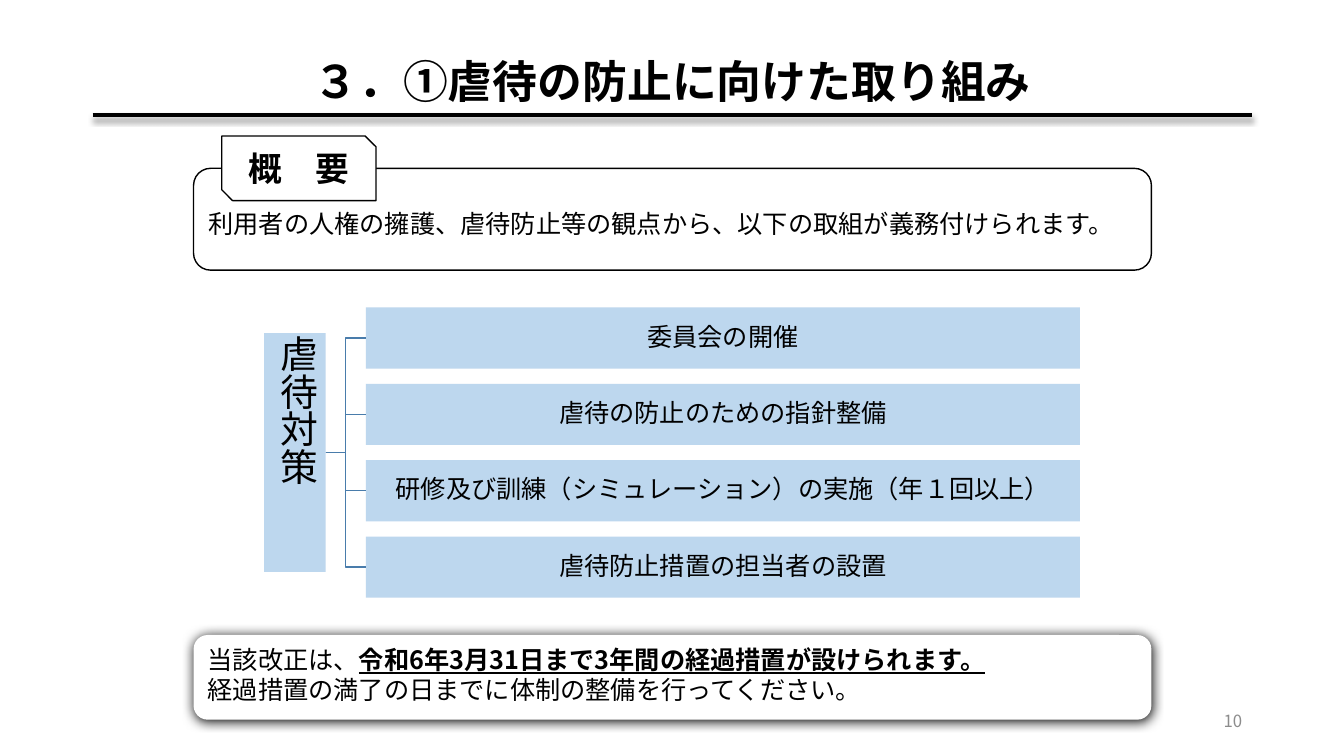
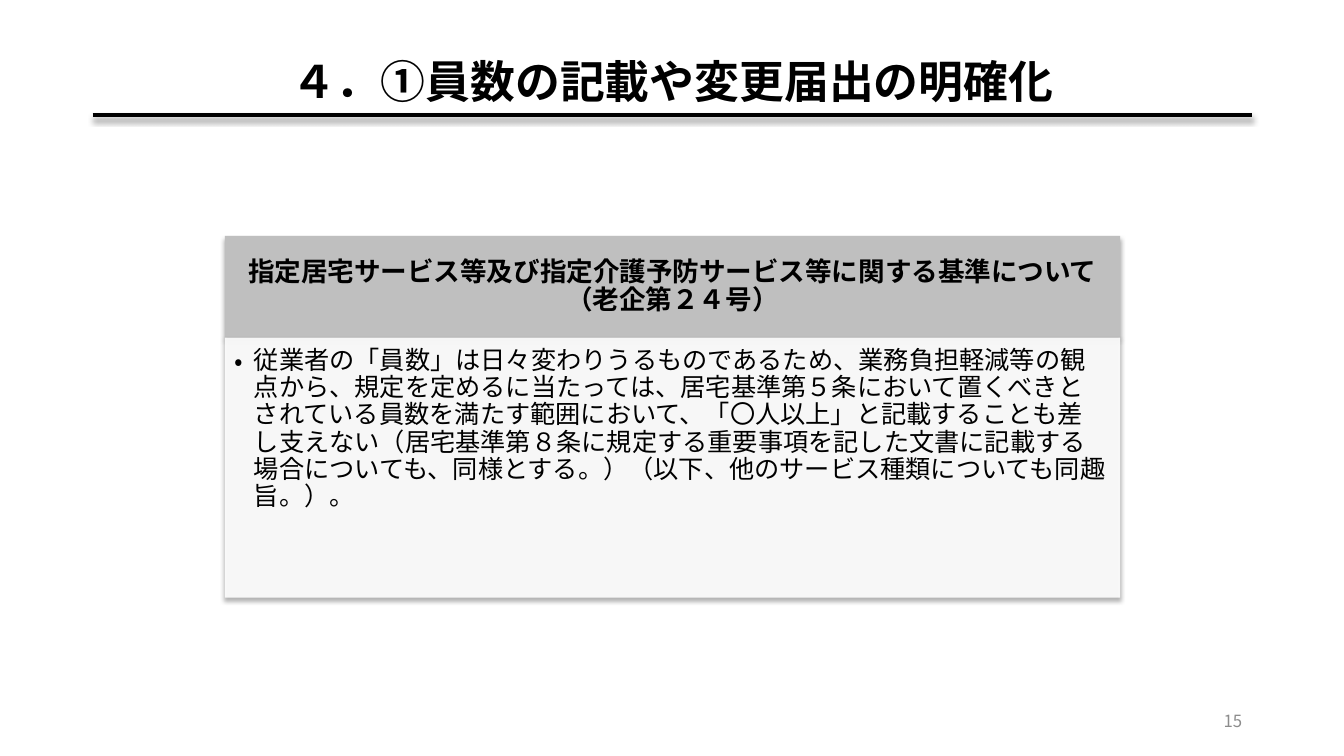
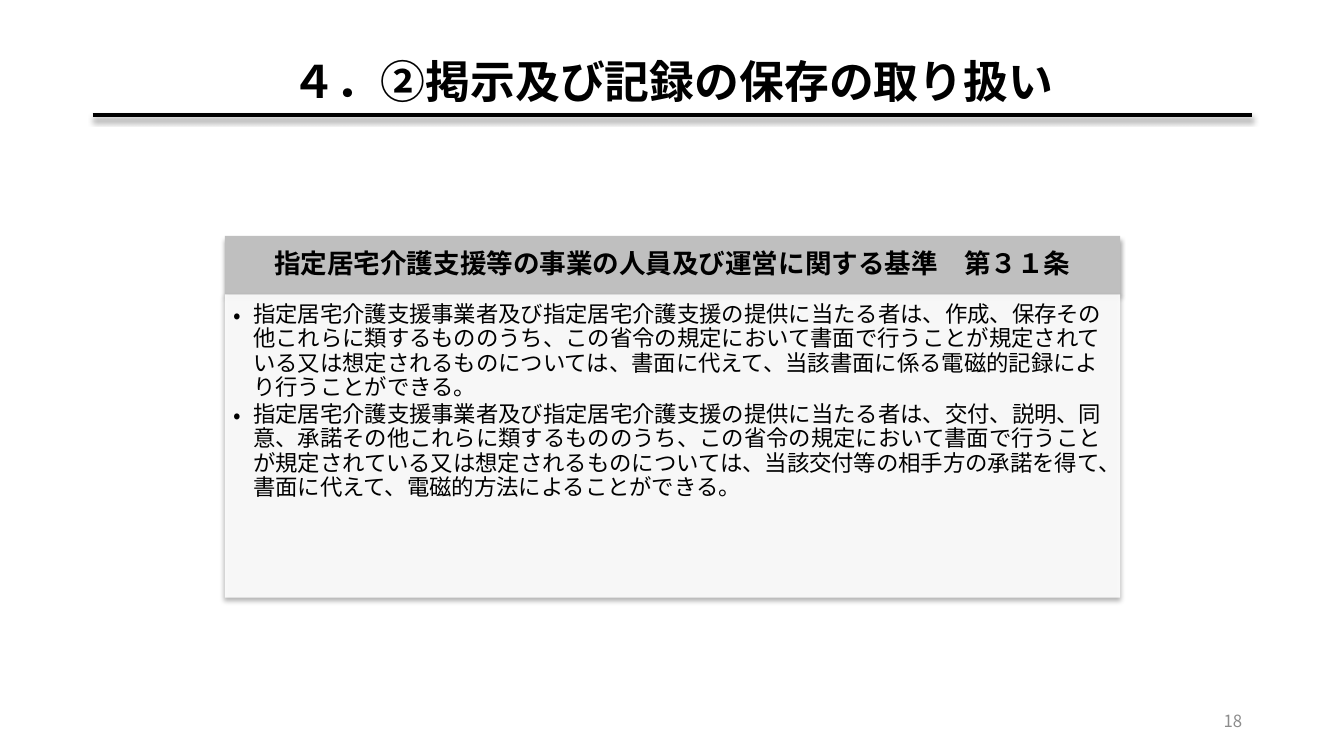
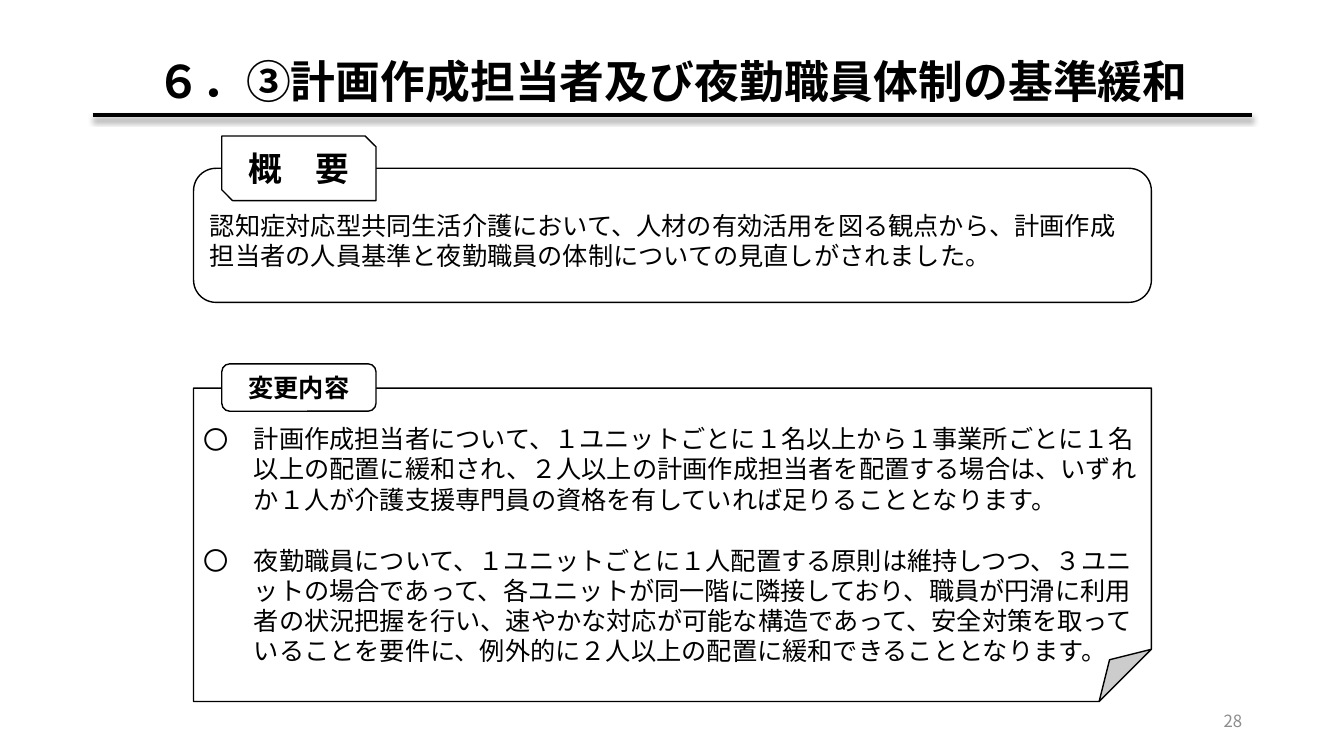
from dataclasses import dataclass

from lxml.etree import SubElement
from pptx import Presentation
from pptx.dml.color import RGBColor
from pptx.enum.lang import MSO_LANGUAGE_ID as Language
from pptx.enum.shapes import MSO_CONNECTOR as Connector, MSO_SHAPE as Shape
from pptx.enum.text import MSO_ANCHOR as Anchor, PP_ALIGN as Align
from pptx.oxml.ns import qn
from pptx.util import Inches, Pt

FONT = "Noto Sans CJK JP"
BLACK = RGBColor(0x00, 0x00, 0x00)
WHITE = RGBColor(0xFF, 0xFF, 0xFF)
PAGE_GRAY = RGBColor(0x8C, 0x8C, 0x8C)
HEADER_GRAY = RGBColor(0xBF, 0xBF, 0xBF)
PALE_BLUE = RGBColor(0xBD, 0xD7, 0xEE)
LINK_BLUE = RGBColor(0x49, 0x7C, 0xAB)
TEXT_INSETS = (0.1, 0.05, 0.1, 0.05)
PANEL_INSETS = (0.1, 0.35, 0.1, 0.05)
LABEL_LEFT, LABEL_WIDTH = 0.28, 1.53


@dataclass(frozen=True)
class Box:
    left: float
    top: float
    width: float
    height: float

    def emu(self):
        return [Inches(n) for n in (self.left, self.top, self.width, self.height)]

    def inner(self, left, top, width, height):
        """Return a box whose offset is counted from this box's corner."""
        return Box(self.left + left, self.top + top, width, height)

    def rows(self, count, gap):
        height = (self.height - gap * (count - 1)) / count
        return [self.inner(0, i * (height + gap), self.width, height) for i in range(count)]


SLIDE = Box(0, 0, 13.33, 7.5)
CONTENT = SLIDE.inner(0.92, 0.4, 11.5, 6.95)
PANEL_LEFT, PANEL_WIDTH = 1.92, 9.5
CARD = SLIDE.inner(2.23, 2.34, 8.88, 3.59)


def set_shadow(shape, opacity=0, blur=0, distance=0):
    """Replace the inherited shadow by a downward one, or by none."""
    effects = SubElement(shape._element.spPr, qn("a:effectLst"))
    if opacity:
        shadow = SubElement(effects, qn("a:outerShdw"), blurRad=str(Pt(blur)),
                            dist=str(Pt(distance)), dir="5400000", algn="t", rotWithShape="0")
        color = SubElement(shadow, qn("a:srgbClr"), val=str(BLACK))
        SubElement(color, qn("a:alpha"), val=str(opacity * 1000))


def add_box(slide, kind, box, fill=WHITE, line=None, shadow=(), opacity=100):
    shape = slide.shapes.add_shape(kind, *box.emu())
    shape.fill.solid()
    shape.fill.fore_color.rgb = fill
    if opacity < 100:
        color = shape._element.spPr.find(qn("a:solidFill"))[0]
        SubElement(color, qn("a:alpha"), val=str(opacity * 1000))
    if line is None:
        shape.line.fill.background()
    else:
        shape.line.color.rgb = line
        shape.line.width = Pt(1)
    set_shadow(shape, *shadow)
    return shape


def set_frame(shape, anchor=Anchor.MIDDLE, insets=TEXT_INSETS):
    frame = shape.text_frame
    frame.word_wrap = True
    frame.vertical_anchor = anchor
    frame.margin_left, frame.margin_top, frame.margin_right, frame.margin_bottom = map(Inches, insets)
    return frame


def add_run(paragraph, text, size, color=BLACK, bold=False, underline=False):
    run = paragraph.add_run()
    run.text = text
    font = run.font
    font.name, font.size, font.bold, font.underline = FONT, Pt(size), bold, underline
    font.color.rgb = color
    font.language_id = Language.JAPANESE
    SubElement(run._r.rPr, qn("a:ea"), typeface=FONT)


def next_paragraph(frame, align=Align.LEFT, spacing=1.0):
    first = frame.paragraphs[0]
    paragraph = frame.add_paragraph() if first.runs else first
    paragraph.alignment = align
    paragraph.line_spacing = spacing
    return paragraph


def set_bullet(paragraph, character, indent):
    properties = paragraph._p.get_or_add_pPr()
    properties.set("marL", str(Inches(indent)))
    properties.set("indent", str(-Inches(indent)))
    SubElement(properties, qn("a:buFont"), typeface=FONT)
    SubElement(properties, qn("a:buChar"), char=character)


def write_line(shape, text, size, align=Align.CENTER, spacing=1.0, insets=TEXT_INSETS, **style):
    paragraph = next_paragraph(set_frame(shape, insets=insets), align, spacing)
    add_run(paragraph, text, size, **style)


def add_titled_slide(presentation, title, page):
    slide = presentation.slides.add_slide(presentation.slide_layouts[6])
    title_box = slide.shapes.add_textbox(*CONTENT.inner(0, 0, CONTENT.width, 0.87).emu())
    write_line(title_box, title, 32, spacing=0.9, bold=True)
    left, top, width, _ = CONTENT.inner(0, 0.74, CONTENT.width, 0).emu()
    rule = slide.shapes.add_connector(Connector.STRAIGHT, left, top, left + width, top)
    rule.line.color.rgb = BLACK
    rule.line.width = Pt(3)
    set_shadow(rule, 40, 4, 3)
    number_box = slide.shapes.add_textbox(*CONTENT.inner(CONTENT.width - 3, 6.55, 3, 0.4).emu())
    write_line(number_box, str(page), 12, align=Align.RIGHT, color=PAGE_GRAY)
    return slide


def add_labelled_panel(slide, box, kind, label, label_kind, label_height, label_rise, label_size):
    """Draw an outlined panel with a label across its top edge; return its text frame."""
    panel = add_box(slide, kind, box, line=BLACK)
    tab = add_box(slide, label_kind, box.inner(LABEL_LEFT, -label_rise, LABEL_WIDTH, label_height), line=BLACK)
    write_line(tab, label, label_size, bold=True)
    return set_frame(panel, Anchor.TOP, PANEL_INSETS)


def add_overview(slide, height, text):
    box = SLIDE.inner(PANEL_LEFT, 1.67, PANEL_WIDTH, height)
    frame = add_labelled_panel(slide, box, Shape.ROUNDED_RECTANGLE, "概　要",
                               Shape.SNIP_2_DIAG_RECTANGLE, 0.64, 0.32, 24)
    add_run(next_paragraph(frame), text, 18)


def add_changes(slide, box, changes):
    """List the changes, each given as its lines."""
    frame = add_labelled_panel(slide, box, Shape.FOLDED_CORNER, "変更内容",
                               Shape.ROUNDED_RECTANGLE, 0.47, 0.24, 18)
    for index, lines in enumerate(changes):
        paragraph = next_paragraph(frame)
        paragraph.space_before = Pt(22 if index else 0)
        set_bullet(paragraph, "〇", 0.5)
        for line_index, line in enumerate(lines):
            if line_index:
                paragraph.add_line_break()
            add_run(paragraph, line, 18)


def add_measure_tree(slide, box, root_text, measures):
    root_height, root_width, branch_left = 2.37, 0.61, 1.01
    root = add_box(slide, Shape.RECTANGLE,
                   box.inner(0, (box.height - root_height) / 2, root_width, root_height), PALE_BLUE)
    write_line(root, root_text, 27, spacing=0.9, insets=(0.02,) * 4)
    root.text_frame._txBody.bodyPr.set("vert", "eaVert")
    branches = box.inner(branch_left, 0, box.width - branch_left, box.height)
    for row, text in zip(branches.rows(len(measures), 0.15), measures):
        measure = add_box(slide, Shape.RECTANGLE, row, PALE_BLUE)
        write_line(measure, text, 18, spacing=0.9, insets=(0.01,) * 4)
        link = slide.shapes.add_connector(Connector.ELBOW, 0, 0, 0, 0)
        link.begin_connect(root, 3)
        link.end_connect(measure, 1)
        link.line.color.rgb = LINK_BLUE
        link.line.width = Pt(1)
        set_shadow(link)


def add_transition_note(slide, box, lines):
    """Write lines of (text, emphasised) pieces in a shadowed box."""
    note = add_box(slide, Shape.ROUNDED_RECTANGLE, box, shadow=(100, 8.5, 1))
    frame = set_frame(note, Anchor.TOP)
    for pieces in lines:
        paragraph = next_paragraph(frame)
        for text, emphasised in pieces:
            add_run(paragraph, text, 18, bold=emphasised, underline=emphasised)


def add_standard_card(slide, box, header_height, header, items, size, body_insets):
    shadow = (32, 3.5, 2.2)
    head = add_box(slide, Shape.RECTANGLE, box.inner(0, 0, box.width, header_height),
                   HEADER_GRAY, shadow=shadow)
    write_line(head, header, 19, spacing=0.9, insets=(0.15, 0.08, 0.15, 0.08), bold=True)
    body = add_box(slide, Shape.RECTANGLE,
                   box.inner(0, header_height, box.width, box.height - header_height),
                   shadow=shadow, opacity=90)
    frame = set_frame(body, Anchor.TOP, body_insets)
    for item in items:
        paragraph = next_paragraph(frame, spacing=0.9)
        paragraph.space_after = Pt(size * 0.15)
        set_bullet(paragraph, "•", 0.19)
        add_run(paragraph, item, size)


def build_abuse_prevention(presentation):
    slide = add_titled_slide(presentation, "３．①虐待の防止に向けた取り組み", 10)
    add_overview(slide, 1.01, "利用者の人権の擁護、虐待防止等の観点から、以下の取組が義務付けられます。")
    add_transition_note(slide, SLIDE.inner(PANEL_LEFT, 6.3, PANEL_WIDTH, 0.84), [
        [("当該改正は、", False), ("令和6年3月31日まで3年間の経過措置が設けられます。", True)],
        [("経過措置の満了の日までに体制の整備を行ってください。", False)],
    ])
    add_measure_tree(slide, SLIDE.inner(2.62, 3.05, 8.09, 2.88), "虐待対策", [
        "委員会の開催",
        "虐待の防止のための指針整備",
        "研修及び訓練（シミュレーション）の実施（年１回以上）",
        "虐待防止措置の担当者の設置",
    ])


def build_staff_numbers(presentation):
    slide = add_titled_slide(presentation, "４．①員数の記載や変更届出の明確化", 15)
    add_standard_card(
        slide, CARD, 1.01,
        "指定居宅サービス等及び指定介護予防サービス等に関する基準について（老企第２４号）",
        ["従業者の「員数」は日々変わりうるものであるため、業務負担軽減等の観点から、"
         "規定を定めるに当たっては、居宅基準第５条において置くべきとされている員数を満たす範囲において、"
         "「〇人以上」と記載することも差し支えない（居宅基準第８条に規定する重要事項を記した文書に"
         "記載する場合についても、同様とする。）（以下、他のサービス種類についても同趣旨。）。"],
        18, (0.1, 0.1, 0.14, 0.16))


def build_record_keeping(presentation):
    slide = add_titled_slide(presentation, "４．②掲示及び記録の保存の取り扱い", 18)
    add_standard_card(
        slide, CARD, 0.58,
        "指定居宅介護支援等の事業の人員及び運営に関する基準　第３１条",
        ["指定居宅介護支援事業者及び指定居宅介護支援の提供に当たる者は、作成、保存その他これらに類する"
         "もののうち、この省令の規定において書面で行うことが規定されている又は想定されるものについては、"
         "書面に代えて、当該書面に係る電磁的記録により行うことができる。",
         "指定居宅介護支援事業者及び指定居宅介護支援の提供に当たる者は、交付、説明、同意、承諾その他"
         "これらに類するもののうち、この省令の規定において書面で行うことが規定されている又は想定される"
         "ものについては、当該交付等の相手方の承諾を得て、書面に代えて、電磁的方法によることができる。"],
        16, (0.09, 0.09, 0.12, 0.14))


def build_relaxed_standards(presentation):
    slide = add_titled_slide(presentation, "６．③計画作成担当者及び夜勤職員体制の基準緩和", 28)
    add_overview(slide, 1.33, "認知症対応型共同生活介護において、人材の有効活用を図る観点から、計画作成"
                              "担当者の人員基準と夜勤職員の体制についての見直しがされました。")
    add_changes(slide, SLIDE.inner(PANEL_LEFT, 3.85, PANEL_WIDTH, 3.11), [
        ["計画作成担当者について、１ユニットごとに１名以上から１事業所ごとに１名",
         "以上の配置に緩和され、２人以上の計画作成担当者を配置する場合は、いずれ",
         "か１人が介護支援専門員の資格を有していれば足りることとなります。"],
        ["夜勤職員について、１ユニットごとに１人配置する原則は維持しつつ、３ユニ",
         "ットの場合であって、各ユニットが同一階に隣接しており、職員が円滑に利用",
         "者の状況把握を行い、速やかな対応が可能な構造であって、安全対策を取って",
         "いることを要件に、例外的に２人以上の配置に緩和できることとなります。"],
    ])


def main():
    presentation = Presentation()
    presentation.slide_width = Inches(SLIDE.width)
    presentation.slide_height = Inches(SLIDE.height)
    for build in (build_abuse_prevention, build_staff_numbers,
                  build_record_keeping, build_relaxed_standards):
        build(presentation)
    presentation.save("out.pptx")


if __name__ == "__main__":
    main()
